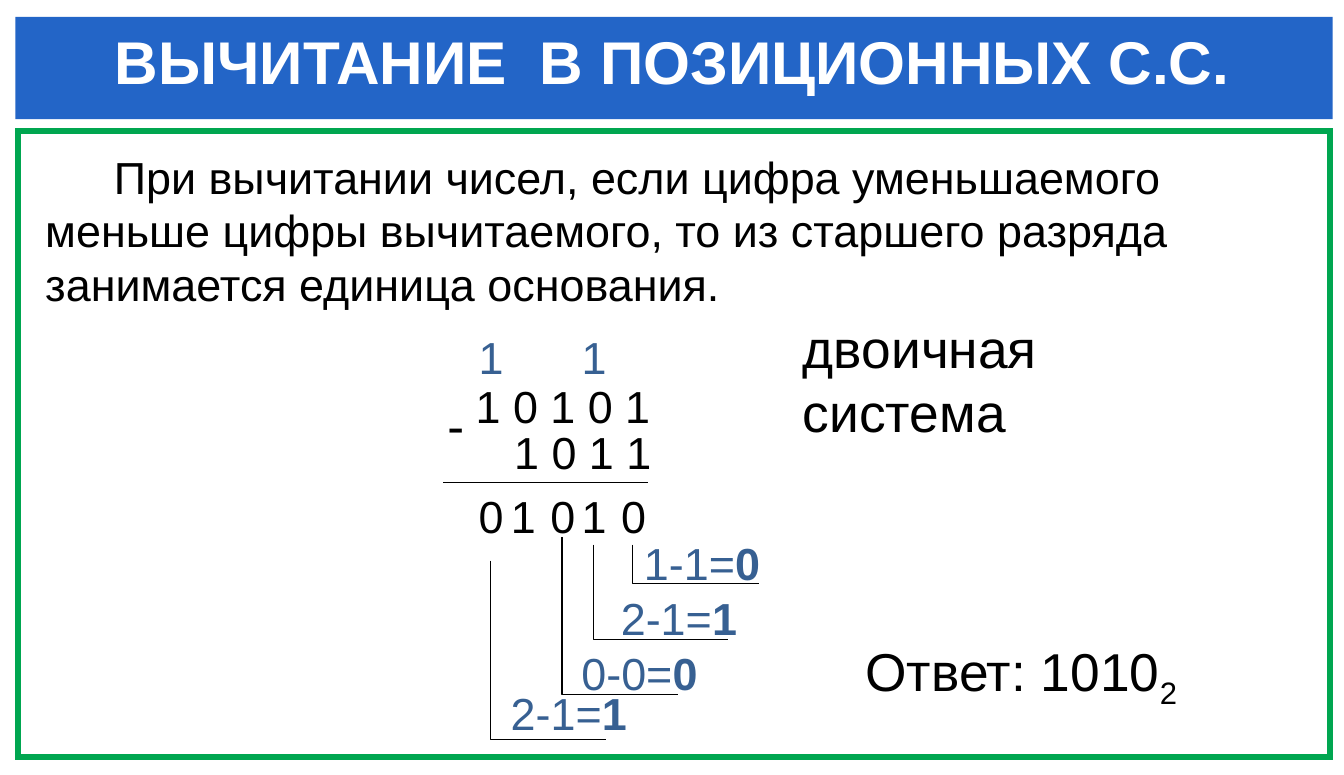
from pptx import Presentation
from pptx.dml.color import RGBColor
from pptx.enum.shapes import MSO_CONNECTOR, MSO_SHAPE
from pptx.enum.text import PP_ALIGN
from pptx.oxml.ns import qn
from pptx.util import Pt
from lxml import etree

RECT, STRAIGHT = MSO_SHAPE.RECTANGLE, MSO_CONNECTOR.STRAIGHT
LEFT, CENTER = PP_ALIGN.LEFT, PP_ALIGN.CENTER

SLIDE_W, SLIDE_H = 958.25, 552.88
COLORS = {"blue": "2365C7", "green": "00A650", "white": "FFFFFF",
          "black": "000000", "step": "376092"}
FONT = "Arial"
BODY, LARGE = 32, 38
INSET_X, INSET_Y = 8.64, 4.32
CELL_W, ROW_H = 36, 47.5

TITLE = "ВЫЧИТАНИЕ  В ПОЗИЦИОННЫХ С.С."
RULE = ("При вычитании чисел, если цифра уменьшаемого меньше цифры вычитаемого, "
        "то из старшего разряда занимается единица основания.")
SYSTEM = ["двоичная", "система"]
ANSWER, ANSWER_BASE = "Ответ: 1010", "2"

# text, left, top, width, size
OPERANDS = [("1 0 1 0 1", 330.5, 265.8, 160, BODY),
            ("-", 310.3, 276.5, 29, 36),
            ("1 0 1 1", 358, 298.8, 130, BODY)]
RESULT = "01010"
DIGIT_LEFTS = [332.6, 355.7, 383.8, 406.1, 434.2]
RESULT_TOP, BORROW_TOP = 344.2, 231.1
BORROW_COLUMNS = [0, 3]
HOOK_OFFSET = 16.9
# result column, hook top, hook bottom, hook length, label left, label top, expression, difference
STEPS = [(4, 388.6, 416.6, 90, 450.5, 378, "1-1=", "0"),
         (3, 388.6, 456.2, 95.8, 434, 416.9, "2-1=", "1"),
         (2, 383, 495.8, 82.8, 405.9, 456.3, "0-0=", "0"),
         (0, 400, 527.5, 82.8, 355.5, 484.6, "2-1=", "1")]


def rgb(name):
    return RGBColor.from_string(COLORS[name])


def add_panel(s, left, top, width, height, fill=None, line=None, weight=0):
    sp = s.shapes.add_shape(RECT, Pt(left), Pt(top), Pt(width), Pt(height))
    sp.shadow.inherit = False
    if fill:
        sp.fill.solid()
        sp.fill.fore_color.rgb = rgb(fill)
    else:
        sp.fill.background()
    if line:
        sp.line.color.rgb = rgb(line)
        sp.line.width = Pt(weight)
        etree.SubElement(sp.line._get_or_add_ln(), qn("a:miter"), lim="800000")
    else:
        sp.line.fill.background()


def add_text(s, lines, left, top, width, height=ROW_H, size=BODY, color="black",
             bold=None, align=LEFT, inset=(INSET_X, INSET_Y)):
    """Add one paragraph per line and return the last paragraph."""
    tf = s.shapes.add_textbox(Pt(left), Pt(top), Pt(width), Pt(height)).text_frame
    tf.word_wrap = True
    tf.margin_left = tf.margin_right = Pt(inset[0])
    tf.margin_top = tf.margin_bottom = Pt(inset[1])
    for i, line in enumerate(lines):
        p = tf.add_paragraph() if i else tf.paragraphs[0]
        p.add_run().text = line
        p.alignment = align
        p.font.name = FONT
        p.font.size = Pt(size)
        p.font.bold = bold
        p.font.color.rgb = rgb(color)
    return p


def add_hook(s, x, top, bottom, length):
    """Add an L-shaped line from a result digit to its calculation."""
    builder = s.shapes.build_freeform(Pt(x), Pt(top))
    builder.add_line_segments([(Pt(x), Pt(bottom)), (Pt(x + length), Pt(bottom))],
                              close=False)
    sp = builder.convert_to_shape()
    sp.shadow.inherit = False
    sp.fill.background()
    sp.line.color.rgb = rgb("black")
    sp.line.width = Pt(0.75)


def add_sum_line(s, left, right, y):
    line = s.shapes.add_connector(STRAIGHT, Pt(left), Pt(y), Pt(right), Pt(y))
    line.line.color.rgb = rgb("black")
    line.line.width = Pt(0.75)
    etree.SubElement(line._element.spPr, qn("a:effectLst"))


def main():
    prs = Presentation()
    prs.slide_width = Pt(SLIDE_W)
    prs.slide_height = Pt(SLIDE_H)
    s = prs.slides.add_slide(prs.slide_layouts[6])

    add_panel(s, 13.1, 93.4, 934.9, 447, line="green", weight=4.3)
    add_panel(s, 11, 12.1, 939.2, 73, fill="blue")
    add_text(s, [TITLE], 18, 17.3, 922.3, 51.8, 43, "white", True, CENTER, (0, 0))

    p = add_text(s, [RULE], 23.6, 102.2, 905.8, 125.3)
    p._p.get_or_add_pPr().set("indent", str(Pt(49)))
    add_text(s, SYSTEM, 563.8, 220.3, 241.9, 100.8, LARGE)
    p = add_text(s, [ANSWER], 608.4, 450.7, 250, 54.7, LARGE)
    r = p.add_run()
    r.text = ANSWER_BASE
    r._r.get_or_add_rPr().set("baseline", "-25000")

    for text, left, top, width, size in OPERANDS:
        add_text(s, [text], left, top, width, size=size)
    add_sum_line(s, 316.1, 462.2, 343.9)
    for digit, left in zip(RESULT, DIGIT_LEFTS):
        add_text(s, [digit], left, RESULT_TOP, CELL_W)
    for column in BORROW_COLUMNS:
        add_text(s, ["1"], DIGIT_LEFTS[column], BORROW_TOP, CELL_W, color="step")

    for column, top, bottom, length, label_left, label_top, expression, difference in STEPS:
        add_hook(s, DIGIT_LEFTS[column] + HOOK_OFFSET, top, bottom, length)
        p = add_text(s, [expression], label_left, label_top, 105, color="step")
        r = p.add_run()
        r.text = difference
        r.font.bold = True

    prs.save("out.pptx")


if __name__ == "__main__":
    main()
